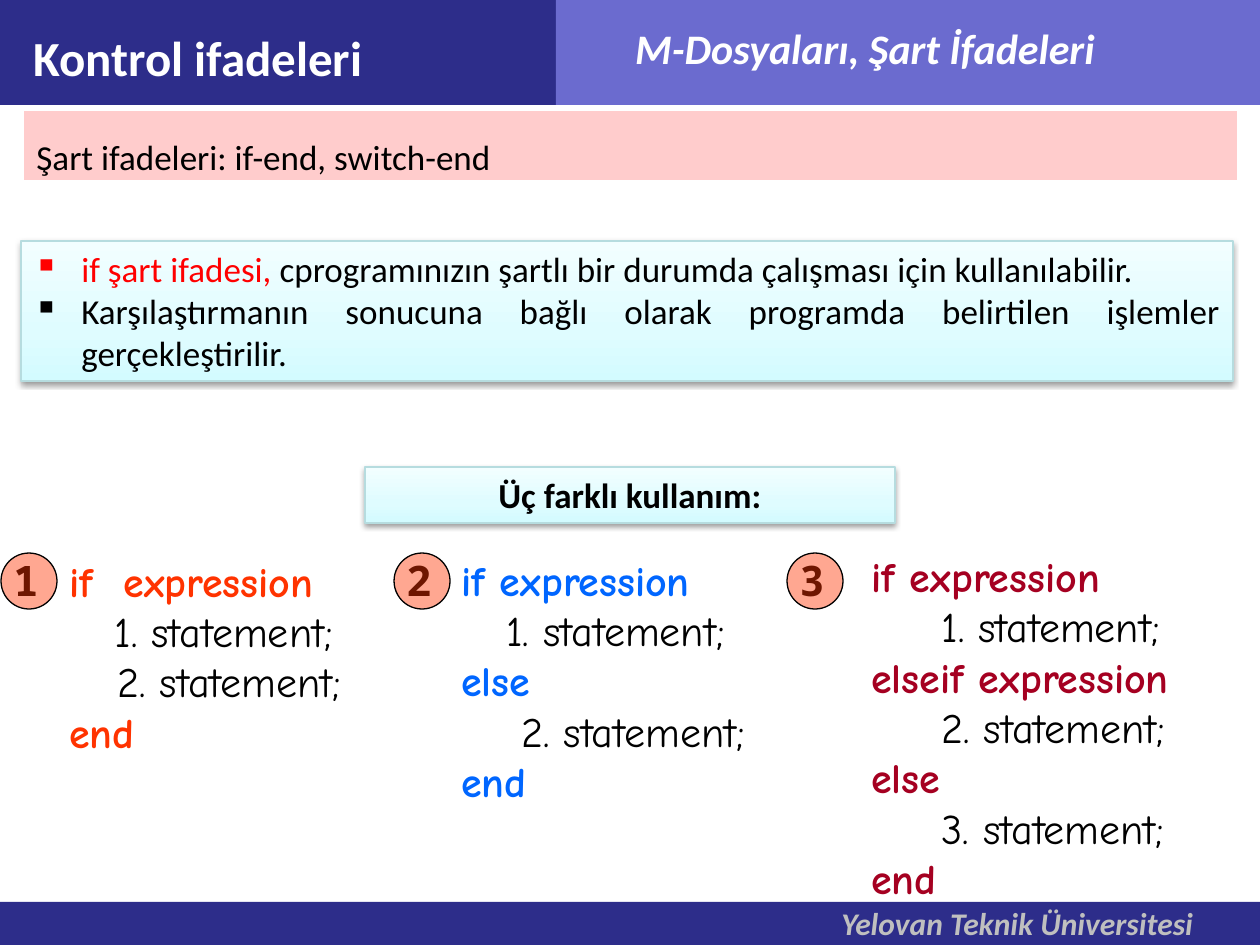
"""Build a slide on conditional statements with three numbered code patterns."""
from copy import deepcopy
from dataclasses import dataclass

from lxml import etree
from pptx import Presentation
from pptx import util as u
from pptx.dml.color import RGBColor
from pptx.enum import shapes, text
from pptx.oxml.ns import qn

SCALE = 914400 / 126
BLACK, WHITE, RED = "000000", "FFFFFF", "FF0000"
NAVY, VIOLET, PINK, ORANGE = "2D2D8A", "6B6BCF", "FFCCCC", "FF3300"
GRADIENT = ((0, "D3FBFF"), (0.35, "DFFCFF"), (1, "F2FEFF"))
LEFT, CENTER, JUSTIFY = text.PP_ALIGN.LEFT, text.PP_ALIGN.CENTER, text.PP_ALIGN.JUSTIFY
TOP, MIDDLE = text.MSO_ANCHOR.TOP, text.MSO_ANCHOR.MIDDLE


@dataclass(frozen=True)
class Area:
    left: int
    top: int
    width: int
    height: int


@dataclass(frozen=True)
class Style:
    size: int
    font: str = "Calibri"
    align: text.PP_ALIGN = LEFT
    anchor: text.MSO_ANCHOR = TOP
    spacing: float = 1.0


@dataclass(frozen=True)
class Span:
    words: str
    color: str = BLACK
    bold: bool = False
    italic: bool = False


@dataclass(frozen=True)
class Para:
    spans: tuple[Span, ...]
    left: int = 0
    hang: int = 0
    bullet: str = ""


@dataclass(frozen=True)
class Pattern:
    number: int
    badge_left: int
    area: Area
    color: str
    lines: tuple[tuple[str, int, int], ...]


PATTERNS = (
    Pattern(1, 1, Area(57, 549, 387, 328), ORANGE, (
        ("if\texpression", 54, 54), ("1. statement;", 45, 0),
        ("2. statement;", 48, 0), ("end", 0, 0))),
    Pattern(2, 394, Area(449, 548, 391, 267), "0066FF", (
        ("if expression", 0, 0), ("1. statement;", 45, 0), ("else", 0, 0),
        ("2. statement;", 60, 0), ("end", 0, 0))),
    Pattern(3, 787, Area(859, 544, 400, 369), "A50021", (
        ("if expression", 0, 0), ("1. statement;", 70, 0),
        ("elseif expression", 0, 0), ("2. statement;", 70, 0),
        ("else", 0, 0), ("3. statement;", 70, 0), ("end", 0, 0))),
)


def px(length: int) -> u.Emu:
    """Turn pixels into EMU."""
    return u.Emu(round(length * SCALE))


def rgb(color: str) -> RGBColor:
    """Turn a hex string into a colour."""
    return RGBColor.from_string(color)


def place(area: Area) -> tuple[u.Emu, ...]:
    """Give an area's position and size in EMU."""
    return px(area.left), px(area.top), px(area.width), px(area.height)


def draw_shape(page, area: Area, color: str, kind=shapes.MSO_SHAPE.RECTANGLE):
    """Draw a plain filled shape without a line."""
    box = page.shapes.add_shape(kind, *place(area))
    box.shadow.inherit = False
    box.fill.solid()
    box.fill.fore_color.rgb = rgb(color)
    box.line.fill.background()
    return box


def outline(box, color: str) -> None:
    """Give a shape a thin line."""
    box.line.color.rgb = rgb(color)
    box.line.width = u.Pt(0.75)


def draw_card(page, area: Area):
    """Draw a pale gradient card with a soft shadow."""
    box = draw_shape(page, area, WHITE)
    outline(box, "B6DCDF")
    box.fill.gradient()
    box.fill.gradient_angle = 90
    first = box._element.spPr.find(".//" + qn("a:gs"))
    first.addnext(deepcopy(first))
    for stop, (position, color) in zip(box.fill.gradient_stops, GRADIENT):
        stop.position = position
        stop.color.rgb = rgb(color)
    effects = box._element.spPr.find(qn("a:effectLst"))
    shadow = etree.SubElement(effects, qn("a:outerShdw"), blurRad="39370",
                              dist="20320", dir="5400000", rotWithShape="0")
    tint = etree.SubElement(shadow, qn("a:srgbClr"), val=BLACK)
    etree.SubElement(tint, qn("a:alpha"), val="38000")
    return box


def write(box, style: Style, paras: tuple[Para, ...]) -> None:
    """Write paragraphs into a shape, run by run."""
    frame = box.text_frame
    frame.word_wrap = True
    frame.vertical_anchor = style.anchor
    for index, item in enumerate(paras):
        para = frame.paragraphs[0] if index == 0 else frame.add_paragraph()
        para.alignment = style.align
        para.line_spacing = style.spacing
        properties = para._p.get_or_add_pPr()
        properties.set("marL", str(px(item.left)))
        properties.set("indent", str(-px(item.hang)))
        if item.bullet:
            etree.SubElement(properties, qn("a:buChar"), char=item.bullet)
        for part in item.spans:
            span = para.add_run()
            span.text = part.words
            span.font.name = style.font
            span.font.size = u.Pt(style.size)
            span.font.bold = part.bold
            span.font.italic = part.italic
            span.font.color.rgb = rgb(part.color)


def draw_text(page, area: Area, style: Style, *paras: Para):
    """Draw a text box."""
    box = page.shapes.add_textbox(*place(area))
    write(box, style, paras)
    return box


def draw_pattern(page, pattern: Pattern) -> None:
    """Draw a numbered badge and its code lines."""
    draw_text(page, Area(pattern.badge_left, 548, 56, 64), Style(24, "Noto Sans Mono"),
              Para((Span(str(pattern.number), bold=True),)))
    badge = draw_shape(page, Area(pattern.badge_left, 553, 56, 56), ORANGE,
                       shapes.MSO_SHAPE.OVAL)
    outline(badge, BLACK)
    tint = badge._element.spPr.find(qn("a:solidFill")).find(qn("a:srgbClr"))
    etree.SubElement(tint, qn("a:alpha"), val="43000")
    paras = []
    for words, left, hang in pattern.lines:
        keyword = not words[0].isdigit()
        color = pattern.color if keyword else BLACK
        paras.append(Para((Span(words, color, keyword),), left, hang))
    draw_text(page, pattern.area, Style(24, "Comic Neue"), *paras)


def main() -> None:
    """Build and save the deck."""
    deck = Presentation()
    deck.slide_width, deck.slide_height = px(1260), px(945)
    page = deck.slides.add_slide(deck.slide_layouts[6])
    draw_shape(page, Area(0, 902, 1260, 43), NAVY)
    draw_shape(page, Area(0, 0, 640, 105), NAVY)
    draw_shape(page, Area(556, 0, 704, 105), VIOLET)
    draw_text(page, Area(471, 16, 788, 63), Style(24, align=CENTER),
              Para((Span("M-Dosyaları, Şart İfadeleri", WHITE, True, True),)))
    draw_text(page, Area(829, 898, 431, 47), Style(18),
              Para((Span("Yelovan Teknik Üniversitesi", "BFBFBF", True, True),)))
    title = draw_text(page, Area(21, 21, 593, 66), Style(28, anchor=MIDDLE),
                      Para((Span("Kontrol ifadeleri", WHITE, True),)))
    title.text_frame.margin_bottom = 0
    heading = draw_shape(page, Area(24, 111, 1213, 69), PINK)
    write(heading, Style(20, align=JUSTIFY, anchor=MIDDLE, spacing=1.5),
          (Para((Span("Şart ifadeleri: if-end, switch-end"),)),))
    write(draw_card(page, Area(21, 241, 1212, 140)),
          Style(20, align=JUSTIFY, anchor=MIDDLE), (
        Para((Span("if şart ifadesi, ", RED),
              Span("cprogramınızın şartlı bir durumda çalışması için kullanılabilir.")),
             48, 48, "▪"),
        Para((Span("Karşılaştırmanın sonucuna bağlı olarak programda belirtilen "
                   "işlemler gerçekleştirilir."),), 48, 48, "▪")))
    for pattern in PATTERNS:
        draw_pattern(page, pattern)
    write(draw_card(page, Area(365, 467, 530, 56)), Style(20, align=CENTER),
          (Para((Span("Üç farklı kullanım:", bold=True),)),))
    deck.save("out.pptx")


if __name__ == "__main__":
    main()
